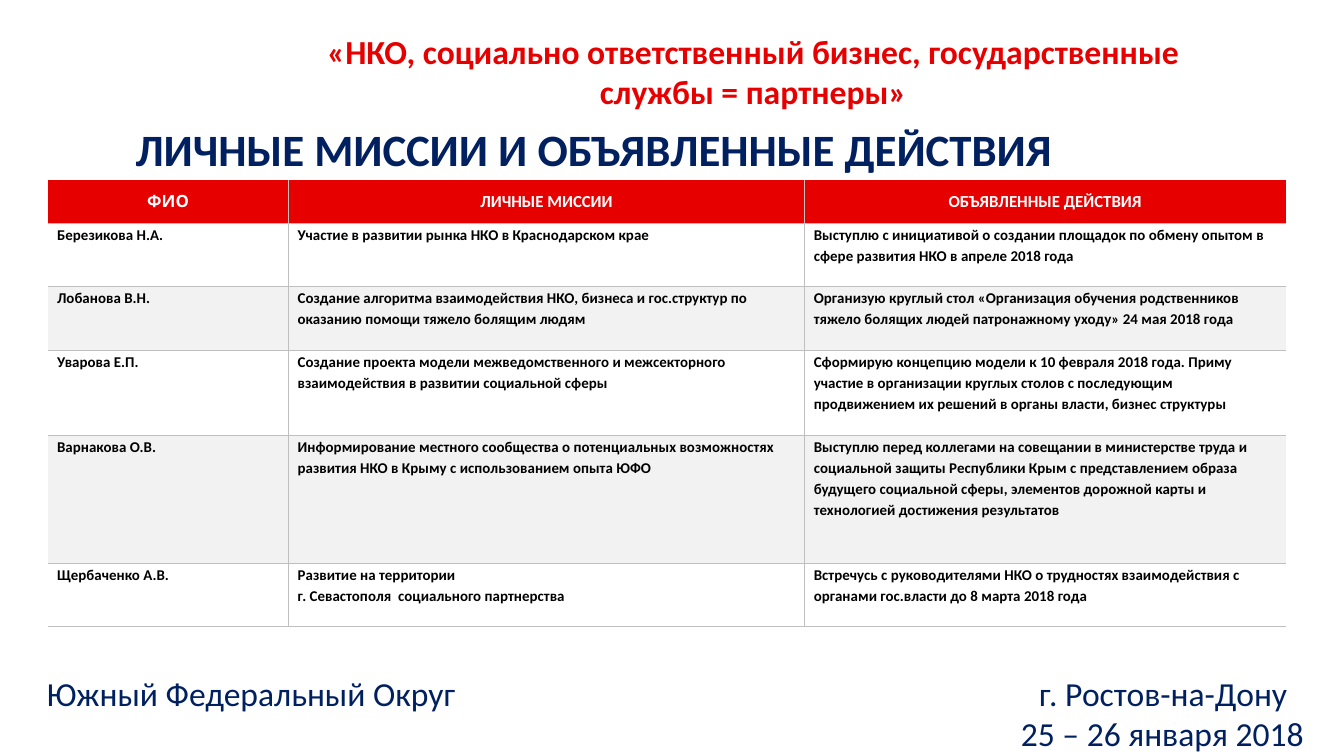
import pptx
import pptx.dml.color
import pptx.enum.text
import pptx.oxml
import pptx.oxml.ns
import pptx.util

Pt = pptx.util.Pt
ALIGN = pptx.enum.text.PP_ALIGN
ANCHOR = pptx.enum.text.MSO_ANCHOR
NS = pptx.oxml.ns.nsdecls("a")

RED, NAVY, WHITE, BLACK = "E60000", "002060", "FFFFFF", "000000"
BAND, RULE = "F2F2F2", "BFBFBF"

HEADER = ["ФИО", "ЛИЧНЫЕ МИССИИ", "ОБЪЯВЛЕННЫЕ ДЕЙСТВИЯ"]
MISSIONS = [
    ("Березикова Н.А.",
     "Участие в развитии рынка НКО в Краснодарском крае",
     "Выступлю с инициативой о создании площадок по обмену опытом в сфере "
     "развития НКО в апреле 2018 года"),
    ("Лобанова В.Н.",
     "Создание алгоритма взаимодействия НКО, бизнеса и гос.структур по "
     "оказанию помощи тяжело болящим людям",
     "Организую круглый стол «Организация обучения родственников тяжело "
     "болящих людей патронажному уходу» 24 мая 2018 года"),
    ("Уварова Е.П.",
     "Создание проекта модели межведомственного и межсекторного "
     "взаимодействия в развитии социальной сферы",
     "Сформирую концепцию модели к 10 февраля 2018 года. Приму участие в "
     "организации круглых столов с последующим продвижением их решений в "
     "органы власти, бизнес структуры"),
    ("Варнакова О.В.",
     "Информирование местного сообщества о потенциальных возможностях "
     "развития НКО в Крыму с использованием опыта ЮФО",
     "Выступлю перед коллегами на совещании в министерстве труда и "
     "социальной защиты Республики Крым с представлением образа будущего "
     "социальной сферы, элементов дорожной карты и технологией достижения "
     "результатов"),
    ("Щербаченко А.В.",
     "Развитие на территории\nг. Севастополя  социального партнерства",
     "Встречусь с руководителями НКО о трудностях взаимодействия с органами "
     "гос.власти до 8 марта 2018 года"),
]
COL_WIDTHS = [128.9, 276.5, 257.7]
ROW_HEIGHTS = [23, 34.1, 34.1, 45.6, 68.4, 34.1]


def rgb(value):
    return pptx.dml.color.RGBColor.from_string(value)


def set_attrs(obj, values):
    for name, value in values.items():
        setattr(obj, name, value)


def write(tf, text, size, color, bold=False, font="Calibri", **para):
    """Fill a text frame, one paragraph per line of text."""
    for i, line in enumerate(text.split("\n")):
        p = tf.paragraphs[0] if i == 0 else tf.add_paragraph()
        set_attrs(p, para)
        r = p.add_run()
        r.text = line
        set_attrs(r.font, {"size": Pt(size), "bold": bold, "name": font})
        r.font.color.rgb = rgb(color)


def add_text(slide, box, text, size, color, bold=False, frame=None, **para):
    tf = slide.shapes.add_textbox(*map(Pt, box)).text_frame
    set_attrs(tf, {"word_wrap": True, **(frame or {})})
    write(tf, text, size, color, bold, **para)
    return tf


def set_borders(cell, sides):
    """Draw a thin rule on the named sides and none on the others."""
    tcPr = cell._tc.get_or_add_tcPr()
    for i, side in enumerate("LRTB"):
        fill = (f'<a:solidFill><a:srgbClr val="{RULE}"/></a:solidFill>'
                if side in sides else "<a:noFill/>")
        tcPr.insert(i, pptx.oxml.parse_xml(
            f'<a:ln{side} {NS} w="{Pt(0.5)}">{fill}</a:ln{side}>'))


def add_titles(slide, event_box, title_box):
    add_text(slide, title_box, "ЛИЧНЫЕ МИССИИ И ОБЪЯВЛЕННЫЕ ДЕЙСТВИЯ", 24, NAVY,
             True, {"word_wrap": False})
    add_text(slide, event_box,
             "«НКО, социально ответственный бизнес, государственные службы = партнеры»",
             18, RED, True, {"vertical_anchor": ANCHOR.MIDDLE},
             alignment=ALIGN.CENTER)


def add_missions(slide, box):
    rows = [HEADER, *MISSIONS]
    table = slide.shapes.add_table(len(rows), len(HEADER), *map(Pt, box)).table
    set_attrs(table, {"first_row": False, "horz_banding": False})
    for col, width in zip(table.columns, COL_WIDTHS):
        col.width = Pt(width)
    for row, height in zip(table.rows, ROW_HEIGHTS):
        row.height = Pt(height)

    for i, texts in enumerate(rows):
        for j, text in enumerate(texts):
            cell = table.cell(i, j)
            head = i == 0
            margin = Pt(2.2 if head else 0)
            set_attrs(cell, {
                "margin_left": Pt(5), "margin_right": Pt(5),
                "margin_top": margin, "margin_bottom": margin,
                "vertical_anchor": ANCHOR.MIDDLE if head else ANCHOR.TOP})
            if head:
                write(cell.text_frame, text, 9, WHITE, True,
                      "Cabin" if j == 0 else "Calibri", alignment=ALIGN.CENTER)
            else:
                write(cell.text_frame, text, 8, BLACK, True, line_spacing=1.15,
                      alignment=ALIGN.JUSTIFY if "\n" in text else ALIGN.LEFT)
            # Rules inside the table and below it, open at the outer edges
            set_borders(cell, "B" + "T" * (i > 0) + "L" * (j > 0)
                        + "R" * (j < len(HEADER) - 1))
            if head or i % 2 == 0:
                cell.fill.solid()
                cell.fill.fore_color.rgb = rgb(RED if head else BAND)
            else:
                cell.fill.background()


def add_footer(slide, box):
    tf = add_text(slide, box,
                  "Южный Федеральный Округ\tг. Ростов-на-Дону\n25 – 26 января 2018",
                  18, NAVY, frame={"vertical_anchor": ANCHOR.MIDDLE,
                                   "margin_left": Pt(15.8)})
    # District on the left, city against a right tab, date at the right edge
    tf.paragraphs[0]._p.get_or_add_pPr().append(pptx.oxml.parse_xml(
        f'<a:tabLst {NS}><a:tab pos="{Pt(664.5)}" algn="r"/></a:tabLst>'))
    tf.paragraphs[1].alignment = ALIGN.RIGHT


def main():
    prs = pptx.Presentation()
    set_attrs(prs, {"slide_width": Pt(720), "slide_height": Pt(405)})
    slide = prs.slides.add_slide(prs.slide_layouts[6])
    add_missions(slide, (25.6, 96.5, 663.1, 239.3))
    add_titles(slide, (146.2, 27.4, 514.8, 21.6), (65.5, 61.9, 510.5, 36))
    add_footer(slide, (9.4, 365.8, 696.2, 32.4))
    prs.save("out.pptx")


if __name__ == "__main__":
    main()
